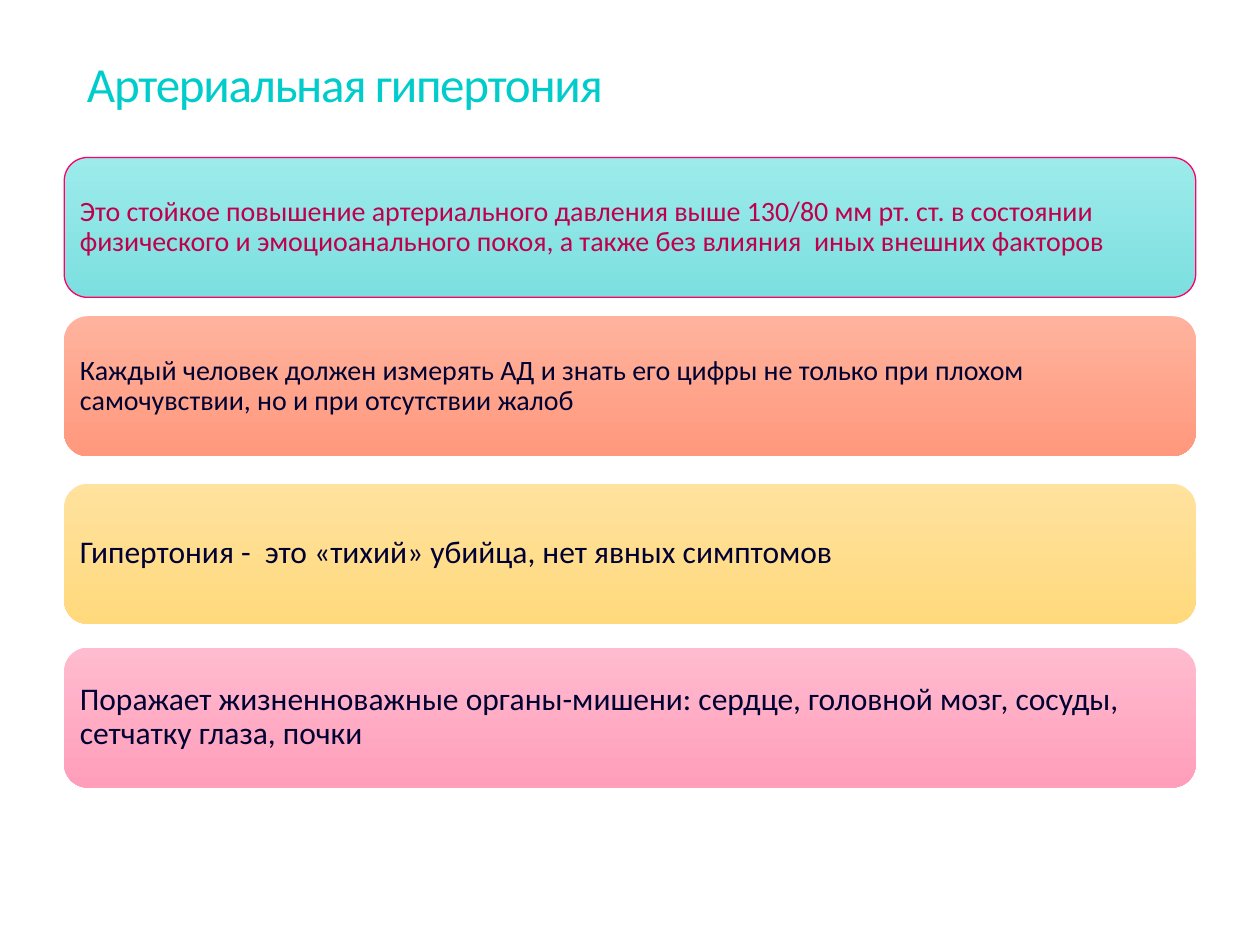
from pptx import Presentation
from pptx.dml.color import RGBColor
from pptx.enum.shapes import MSO_SHAPE
from pptx.enum.text import MSO_ANCHOR, MSO_AUTO_SIZE, PP_ALIGN
from pptx.util import Inches, Pt

COLORS = {
    "title": "00CCCC",
    "text": "000033",
    "accent_text": "BF004C",
    "accent_line": "FF0066",
    "teal_top": "9DEBEB", "teal_bottom": "7CDFDF",
    "coral_top": "FFB39E", "coral_bottom": "FF987C",
    "yellow_top": "FFE29E", "yellow_bottom": "FFD97C",
    "pink_top": "FFBBCF", "pink_bottom": "FF9EBB",
}

CARDS = [
    (1.25, "teal", 16, "accent_text", "accent_line",
     "Это стойкое повышение артериального давления выше 130/80 мм рт. ст. в состоянии "
     "физического и эмоциоанального покоя, а также без влияния  иных внешних факторов"),
    (2.51, "coral", 16, "text", None,
     "Каждый человек должен измерять АД и знать его цифры не только при плохом "
     "самочувствии, но и при отсутствии жалоб"),
    (3.84, "yellow", 18, "text", None,
     "Гипертония -  это «тихий» убийца, нет явных симптомов"),
    (5.14, "pink", 18, "text", None,
     "Поражает жизненноважные органы-мишени: сердце, головной мозг, сосуды, "
     "сетчатку глаза, почки"),
]


class SlideBuilder:
    """Holds the text style and the current slide."""

    font = "Calibri"

    def __init__(self, slide):
        self.slide = slide

    def color(self, name):
        return RGBColor.from_string(COLORS[name])

    def set_text(self, tf, text, size, color, spacing, margins):
        tf.word_wrap = True
        tf.auto_size = MSO_AUTO_SIZE.NONE
        tf.margin_left = tf.margin_right = Inches(margins[0])
        tf.margin_top = tf.margin_bottom = Inches(margins[1])
        p = tf.paragraphs[0]
        p.alignment = PP_ALIGN.LEFT
        p.line_spacing = spacing
        r = p.add_run()
        r.text = text
        p.font.name = self.font
        p.font.size = Pt(size)
        p.font.color.rgb = self.color(color)
        return r

    def title(self, text):
        sp = self.slide.shapes.title
        sp.left, sp.top = Inches(0.69), Inches(0.4)
        sp.width, sp.height = Inches(8.62), Inches(1.03)
        tf = sp.text_frame
        tf.vertical_anchor = MSO_ANCHOR.TOP
        r = self.set_text(tf, text, 28, "title", Pt(32), (0, 0.05))
        r._r.get_or_add_rPr().set("spc", "-70")

    def card(self, top, fill, size, color, line, text):
        sp = self.slide.shapes.add_shape(
            MSO_SHAPE.ROUNDED_RECTANGLE,
            Inches(0.51), Inches(top), Inches(8.98), Inches(1.11))
        sp.shadow.inherit = False
        sp.fill.gradient()
        sp.fill.gradient_angle = 270
        for stop, end in zip(sp.fill.gradient_stops, ("top", "bottom")):
            stop.color.rgb = self.color(f"{fill}_{end}")
        if line:
            sp.line.color.rgb = self.color(line)
            sp.line.width = Pt(0.75)
        else:
            sp.line.fill.background()
        tf = sp.text_frame
        tf.vertical_anchor = MSO_ANCHOR.MIDDLE
        self.set_text(tf, text, size, color, 0.9, (0.07, 0.07))


def main():
    prs = Presentation()
    prs.slide_width, prs.slide_height = Inches(10), Inches(7.5)
    s = SlideBuilder(prs.slides.add_slide(prs.slide_layouts[5]))
    s.title("Артериальная гипертония")
    for card in CARDS:
        s.card(*card)
    prs.save("out.pptx")


if __name__ == "__main__":
    main()
